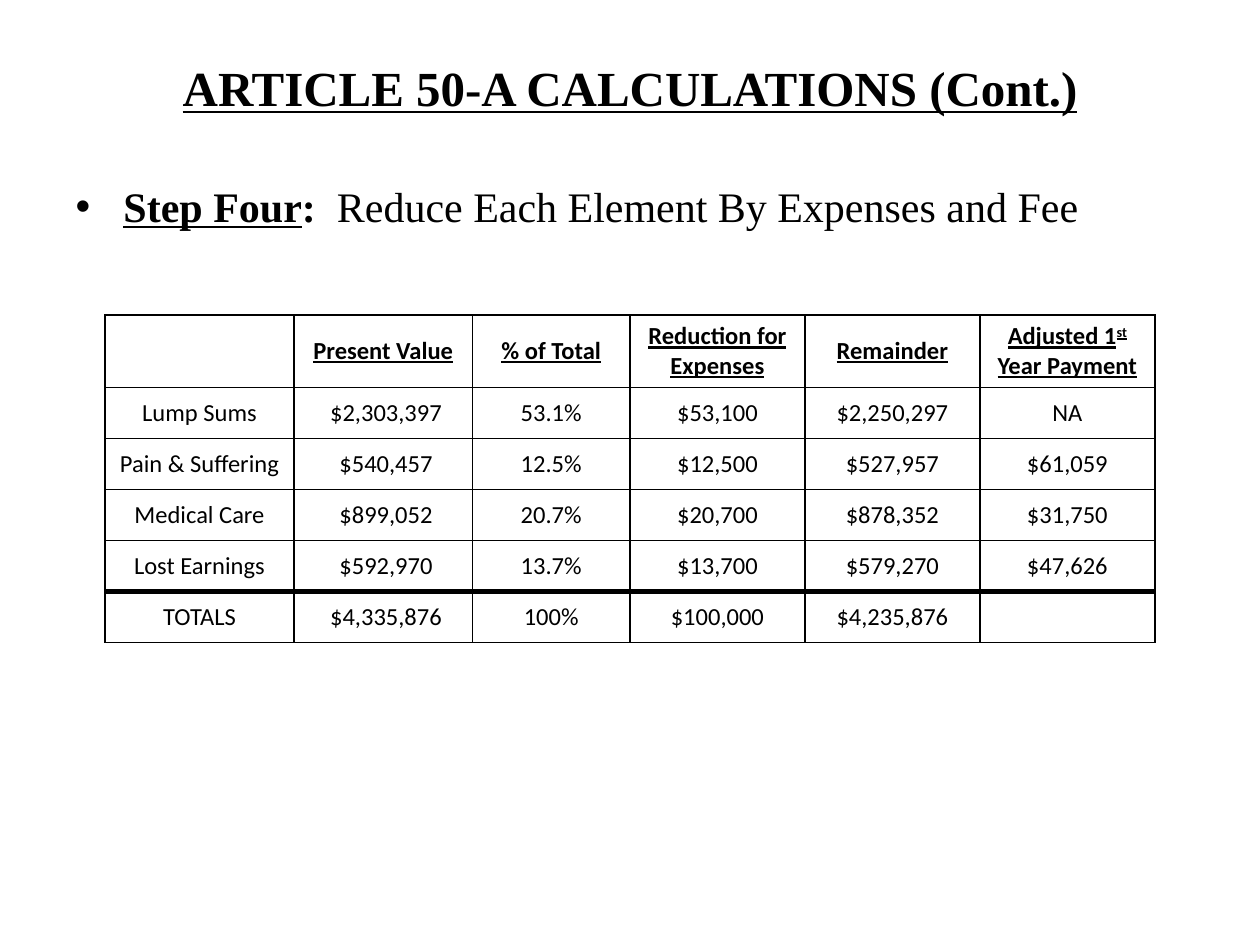
import pptx
import pptx.dml.color
import pptx.enum.text
import pptx.oxml
import pptx.oxml.ns
import pptx.util

look = {
    "ink": pptx.dml.color.RGBColor(0, 0, 0),
    "serif": "Times New Roman",
    "sans": "Calibri",
    "title": 28,
    "body": 24,
    "cell": 14,
    "thin": 1,
    "thick": 3,
}
align = pptx.enum.text.PP_ALIGN
anchor = pptx.enum.text.MSO_ANCHOR


def add_run(para, text, face, size, bold=False, under=False):
    run = para.add_run()
    run.text = text
    font = run.font
    font.name = look[face]
    font.size = pptx.util.Pt(look[size])
    font.bold = bold
    font.underline = under
    font.color.rgb = look["ink"]
    return run


def add_edge(cell, side, width):
    edge = pptx.oxml.parse_xml(
        f'<a:ln{side} {pptx.oxml.ns.nsdecls("a")} w="{pptx.util.Pt(width)}">'
        f'<a:solidFill><a:srgbClr val="{look["ink"]}"/></a:solidFill></a:ln{side}>'
    )
    cell._tc.get_or_add_tcPr().append(edge)


deck = pptx.Presentation()
deck.slide_width = pptx.util.Inches(10)
deck.slide_height = pptx.util.Inches(7.5)
wide, high = deck.slide_width, deck.slide_height
slide = deck.slides.add_slide(deck.slide_layouts[1])

title = slide.shapes.title
body = slide.placeholders[1]
for box, top, tall in ((title, 0.04, 0.104), (body, 0.177, 0.8)):
    box.left, box.width = int(wide * 0.05), int(wide * 0.9)
    box.top, box.height = int(high * top), int(high * tall)
    box.text_frame.auto_size = pptx.enum.text.MSO_AUTO_SIZE.NONE

title.text_frame.vertical_anchor = anchor.MIDDLE
para = title.text_frame.paragraphs[0]
para.alignment = align.CENTER
add_run(para, "ARTICLE 50-A CALCULATIONS (Cont.)", "serif", "title", True, True)

para = body.text_frame.paragraphs[0]
para.alignment = align.JUSTIFY
para.line_spacing = 1.14
para.space_before = pptx.util.Pt(look["body"] * 0.2)
props = para._p.get_or_add_pPr()
props.set("marL", str(pptx.util.Inches(0.38)))
props.set("indent", str(pptx.util.Inches(-0.38)))
props.append(pptx.oxml.parse_xml(
    f'<a:buChar {pptx.oxml.ns.nsdecls("a")} char="•"/>'))
add_run(para, "Step Four", "serif", "body", True, True)
add_run(para, ":  ", "serif", "body", True)
add_run(para, "Reduce Each Element By Expenses and Fee", "serif", "body")

rows = [
    ["", "Present Value", "% of Total", "Reduction for Expenses", "Remainder",
     ("Adjusted 1", "st", " Year Payment")],
    ["Lump Sums", " $2,303,397", "53.1%", "$53,100", "$2,250,297", "NA"],
    ["Pain & Suffering", " $540,457", "12.5%", "$12,500", "$527,957", "$61,059"],
    ["Medical Care", " $899,052", "20.7%", "$20,700", "$878,352", "$31,750"],
    ["Lost Earnings", " $592,970", "13.7%", "$13,700", "$579,270", "$47,626"],
    ["TOTALS", " $4,335,876", "100%", "$100,000", "$4,235,876", ""],
]
shares = [0.18, 0.17, 0.15] + [0.5 / 3] * 3
span = wide * 5 / 6
head, row_high = pptx.util.Inches(0.57), pptx.util.Inches(0.405)
last = len(rows) - 1
frame = slide.shapes.add_table(
    len(rows), len(shares), int((wide - span) / 2), int(high / 3),
    int(span), head + last * row_high)
table = frame.table
table.first_row = table.horz_banding = False
for col, share in zip(table.columns, shares):
    col.width = int(span * share)

for r, row in enumerate(rows):
    table.rows[r].height = row_high if r else head
    for c, text in enumerate(row):
        cell = table.cell(r, c)
        cell.vertical_anchor = anchor.MIDDLE
        if r and c == 1:
            cell.margin_left = cell.margin_right = pptx.util.Inches(0.01)
            cell.margin_top, cell.margin_bottom = pptx.util.Inches(0.01), 0
        for side in "LRTB":
            heavy = (side, r) in (("B", last - 1), ("T", last))
            add_edge(cell, side, look["thick" if heavy else "thin"])
        cell.fill.background()
        para = cell.text_frame.paragraphs[0]
        para.alignment = align.CENTER
        parts = (text,) if isinstance(text, str) else text
        for part in filter(None, parts):
            run = add_run(para, part, "sans", "cell", r == 0, r == 0)
            if part == "st":
                run._r.get_or_add_rPr().set("baseline", "30000")

deck.save("out.pptx")
